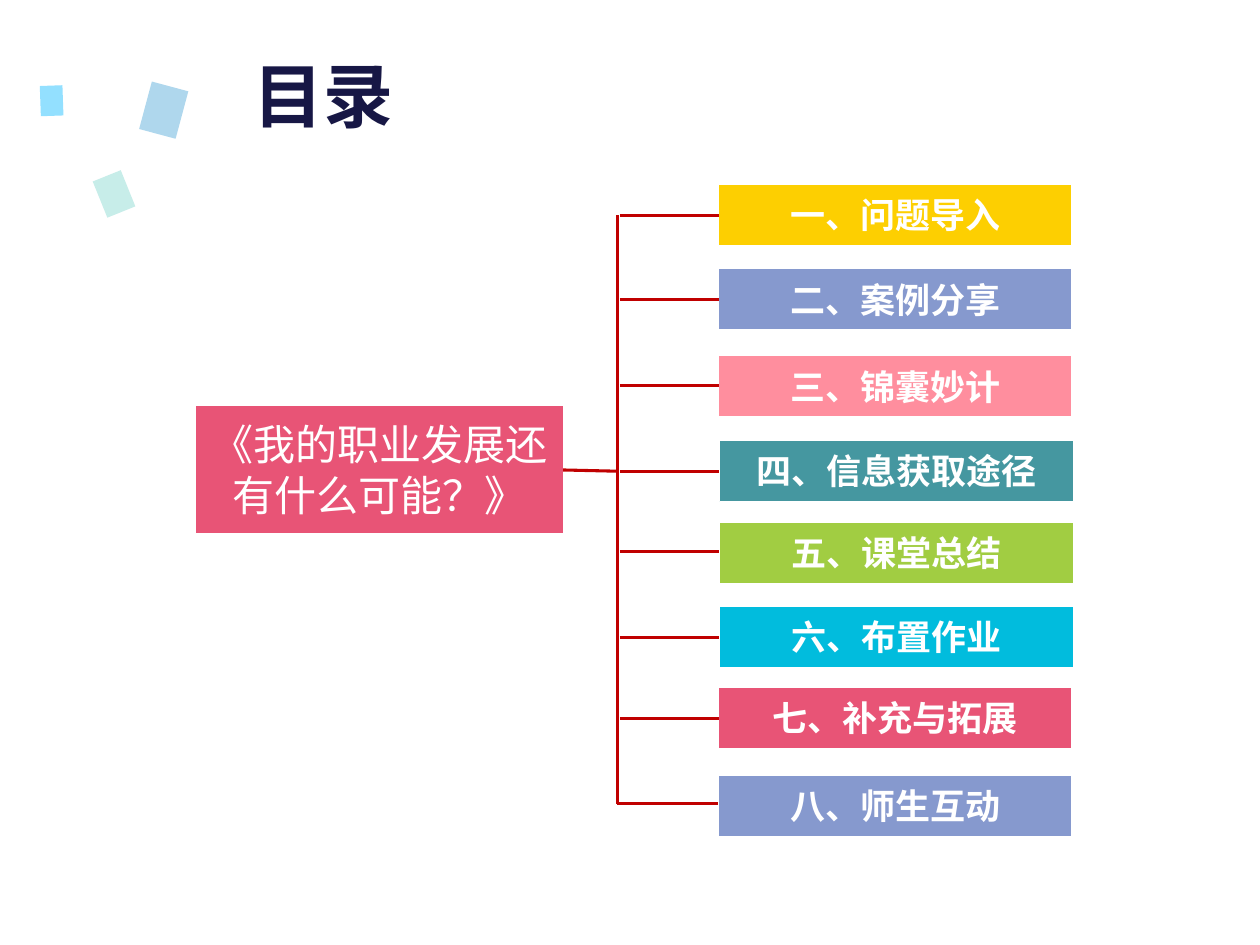
from pptx import Presentation
from pptx import util as u
from pptx.dml.color import RGBColor
from pptx.enum import shapes, text
from pptx.oxml.ns import qn
from lxml import etree

PX = 9144
FONT = "Noto Sans CJK SC"
HUES = {
    "white": "FFFFFF", "navy": "171745", "red": "C00000",
    "mint": "C7EDE9", "pale": "AFD7ED", "sky": "93E0FF",
    "rose": "E85476", "gold": "FDCF01", "blue": "8699CE", "pink": "FF8E9E",
    "teal": "4597A0", "lime": "A1CD42", "cyan": "01BCDD",
}
ROWS = [
    ("一、问题导入", "gold", 570, 146, 171),
    ("二、案例分享", "blue", 570, 213, 238),
    ("三、锦囊妙计", "pink", 570, 282, 306),
    ("四、信息获取途径", "teal", 571, 349, 374),
    ("五、课堂总结", "lime", 571, 414, 438),
    ("六、布置作业", "cyan", 571, 481, 506),
    ("七、补充与拓展", "rose", 570, 545, 570),
    ("八、师生互动", "blue", 570, 615, 638),
]
CHIPS = [
    ("mint", (75, 142, 31, 24), 68),
    ("pale", (115, 68, 30, 39), 15),
    ("sky", (29, 71, 24, 18), 88),
]


def hue(name):
    return RGBColor.from_string(HUES[name])


class Deck:
    def __init__(self):
        self.prs = Presentation()
        self.prs.slide_width = 1000 * PX
        self.prs.slide_height = 750 * PX
        self.slide = self.prs.slides.add_slide(self.prs.slide_layouts[5])

    def label(self, shape, words, tone, style, inset=None):
        frame = shape.text_frame
        look = {"word_wrap": True, "auto_size": text.MSO_AUTO_SIZE.NONE,
                "vertical_anchor": text.MSO_ANCHOR.MIDDLE}
        if inset is not None:
            for side in ("left", "top", "right", "bottom"):
                look["margin_" + side] = inset
        for key, val in look.items():
            setattr(frame, key, val)
        para = frame.paragraphs[0]
        para.alignment = text.PP_ALIGN.CENTER
        run = para.add_run()
        run.text = words
        for key, val in style.items():
            setattr(run.font, key, val)
        run.font.color.rgb = hue(tone)
        face = etree.SubElement(run.font._element, qn("a:ea"))
        face.set("typeface", FONT)

    def title(self, words, box):
        shape = self.slide.shapes.title
        for key, val in zip(("left", "top", "width", "height"), box):
            setattr(shape, key, val * PX)
        style = {"size": u.Pt(40), "name": FONT, "bold": True}
        self.label(shape, words, "navy", style, 0)

    def block(self, kind, box, fill, edge=None, turn=0):
        shape = self.slide.shapes.add_shape(kind, *(v * PX for v in box))
        shape.shadow.inherit = False
        shape.rotation = turn
        shape.fill.solid()
        shape.fill.fore_color.rgb = hue(fill)
        if edge:
            shape.line.color.rgb = hue("white")
            shape.line.width = u.Pt(edge)
        else:
            shape.line.fill.background()
        return shape

    def node(self, words, box, fill, size, bold, edge=1):
        kind = shapes.MSO_SHAPE.FLOWCHART_PROCESS
        shape = self.block(kind, box, fill, edge)
        style = {"size": u.Pt(size), "name": "Arial", "bold": bold}
        self.label(shape, words, "white", style)

    def line(self, *ends):
        wire = self.slide.shapes.add_connector(
            shapes.MSO_CONNECTOR.STRAIGHT, *(v * PX for v in ends))
        wire.line.color.rgb = hue("red")
        wire.line.width = u.Pt(1.75)
        etree.SubElement(wire._element.spPr, qn("a:effectLst"))


def main():
    deck = Deck()
    for fill, box, turn in CHIPS:
        deck.block(shapes.MSO_SHAPE.RECTANGLE, box, fill, turn=turn)
    deck.title("目录", (185, 48, 144, 54))
    deck.node("《我的职业发展还有什么可能？》", (155, 322, 292, 101),
              "rose", 24, False, 0.5)
    for words, fill, left, top, mid in ROWS:
        deck.node(words, (left, top, 281, 49), fill, 20, True)
    trunk, first, last = 490, ROWS[0][-1], ROWS[-1][-1]
    deck.line(trunk, first, trunk, last)
    deck.line(447, 373, trunk, 374)
    for *_, mid in ROWS[:-1]:
        deck.line(trunk + 2, mid, 571, mid)
    deck.line(trunk, last, 570, last)
    deck.prs.save("out.pptx")


if __name__ == "__main__":
    main()
